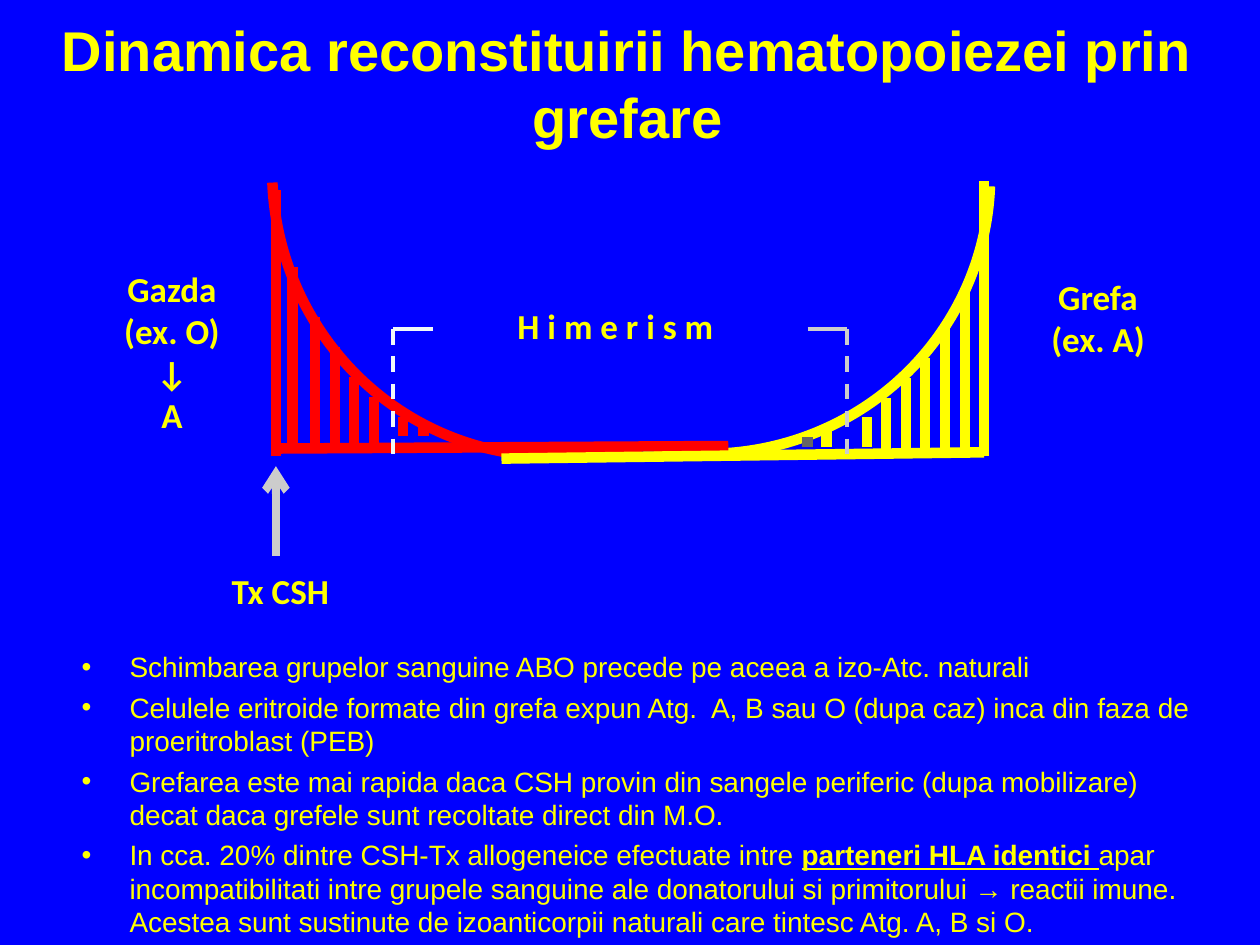
from typing import NamedTuple

from lxml import etree
from pptx import Presentation
from pptx.dml.color import RGBColor
from pptx.enum.dml import MSO_LINE
from pptx.enum.shapes import MSO_CONNECTOR, MSO_SHAPE
from pptx.enum.text import MSO_ANCHOR, MSO_AUTO_SIZE, PP_ALIGN
from pptx.oxml.ns import qn
from pptx.util import Emu, Pt

STRAIGHT = MSO_CONNECTOR.STRAIGHT
ARC = MSO_SHAPE.ARC
DASH = MSO_LINE.DASH
CENTER, LEFT = PP_ALIGN.CENTER, PP_ALIGN.LEFT
MIDDLE, TOP = MSO_ANCHOR.MIDDLE, MSO_ANCHOR.TOP
GROW, FIXED = MSO_AUTO_SIZE.SHAPE_TO_FIT_TEXT, MSO_AUTO_SIZE.NONE

BLUE = RGBColor(0x00, 0x00, 0xFF)
YELLOW = RGBColor(0xFF, 0xFF, 0x00)
RED = RGBColor(0xFF, 0x00, 0x00)
SILVER = RGBColor(0xCC, 0xCC, 0xCC)
WHITE = RGBColor(0xF1, 0xF9, 0xF9)
GREY = RGBColor(0x66, 0x66, 0x66)

PX_EMU = 9144
BULLET_INDENT = 38
THICK = 6
THIN = 2.25


class Stroke(NamedTuple):
    x1: int
    y1: int
    x2: int
    y2: int
    color: RGBColor
    weight: float = THICK
    dashed: bool = False
    arrow: bool = False


class Curve(NamedTuple):
    left: int
    top: int
    rotation: float
    start: float
    color: RGBColor


class Label(NamedTuple):
    left: int
    top: int
    height: int
    lines: list[str]


class Bar(NamedTuple):
    x: int
    top: int
    bottom: int
    color: RGBColor


TITLE = "Dinamica reconstituirii hematopoiezei prin grefare"
TITLE_FONT = {"name": "Arial", "size": Pt(32), "bold": True}
LABEL_FONT = {"name": "Calibri", "size": Pt(20), "bold": True}
BODY_FONT = {"name": "Arial", "size": Pt(16), "bold": False}
STRESS_FONT = BODY_FONT | {"bold": True, "underline": True}

POINTS = [
    [("Schimbarea grupelor sanguine ABO precede pe aceea a izo-Atc. naturali", BODY_FONT)],
    [("Celulele eritroide formate din grefa expun Atg.  A, B sau O (dupa caz) "
      "inca din faza de proeritroblast (PEB)", BODY_FONT)],
    [("Grefarea este mai rapida daca CSH provin din sangele periferic (dupa mobilizare) "
      "decat daca grefele sunt recoltate direct din M.O.", BODY_FONT)],
    [("In cca. 20% dintre CSH-Tx allogeneice efectuate intre ", BODY_FONT),
     ("parteneri HLA identici ", STRESS_FONT),
     ("apar incompatibilitati intre grupele sanguine ale donatorului si primitorului → "
      "reactii imune. Acestea sunt sustinute de izoanticorpii naturali care tintesc "
      "Atg. A, B si O.", BODY_FONT)],
]

AXES = [Stroke(219, 151, 219, 362, RED), Stroke(781, 144, 781, 362, YELLOW)]
CURVES = [
    Curve(337, -89, 102.8, 155.9, YELLOW),
    Curve(216, -91, 180, 156.33, RED),
]
CURVE_WIDTH, CURVE_HEIGHT, CURVE_END = 445, 453, 214.56
BASELINES = [Stroke(217, 356, 578, 354, RED), Stroke(398, 364, 781, 359, YELLOW)]
LABEL_WIDTH = 227
LABELS = [
    Label(375, 237, 44, ["H i m e r i s m"]),
    Label(23, 207, 145, ["Gazda", "(ex. O)", "↓", "A"]),
    Label(758, 214, 77, ["Grefa", "(ex. A)"]),
    Label(109, 447, 44, ["Tx CSH"]),
]
MARKERS = [
    Stroke(219, 441, 219, 370, SILVER, 4.5, arrow=True),
    Stroke(312, 261, 312, 362, WHITE, THIN, dashed=True),
    Stroke(672, 261, 672, 362, SILVER, THIN, dashed=True),
    Stroke(312, 261, 344, 261, WHITE, THIN),
    Stroke(641, 261, 672, 261, SILVER, THIN),
]
BARS = [
    Bar(232, 212, 356, RED), Bar(250, 252, 353, RED), Bar(266, 275, 354, RED),
    Bar(281, 299, 354, RED), Bar(297, 315, 354, RED), Bar(320, 331, 346, RED),
    Bar(336, 338, 346, RED), Bar(641, 347, 355, GREY), Bar(656, 339, 355, YELLOW),
    Bar(688, 331, 355, YELLOW), Bar(703, 316, 362, YELLOW), Bar(719, 300, 362, YELLOW),
    Bar(734, 284, 362, YELLOW), Bar(750, 260, 362, YELLOW), Bar(766, 230, 362, YELLOW),
]


def px(length: int) -> Emu:
    return Emu(length * PX_EMU)


def apply(target, values: dict) -> None:
    for name, value in values.items():
        setattr(target, name, value)


def draw_stroke(page, stroke: Stroke) -> None:
    ends = (px(length) for length in stroke[:4])
    connector = page.shapes.add_connector(STRAIGHT, *ends)
    line = connector.line
    line.color.rgb = stroke.color
    line.width = Pt(stroke.weight)
    if stroke.dashed:
        line.dash_style = DASH
    properties = connector._element.spPr
    if stroke.arrow:
        outline = properties.find(qn("a:ln"))
        etree.SubElement(outline, qn("a:tailEnd"), type="arrow")
    etree.SubElement(properties, qn("a:effectLst"))


def draw_curve(page, curve: Curve) -> None:
    shape = page.shapes.add_shape(
        ARC, px(curve.left), px(curve.top), px(CURVE_WIDTH), px(CURVE_HEIGHT))
    shape.adjustments[0] = curve.start
    shape.adjustments[1] = CURVE_END
    shape.rotation = curve.rotation
    shape.shadow.inherit = False
    shape.fill.background()
    shape.line.color.rgb = curve.color
    shape.line.width = Pt(THICK)


def add_bullet(para) -> None:
    properties = para._p.get_or_add_pPr()
    properties.set("marL", str(px(BULLET_INDENT)))
    properties.set("indent", str(px(-BULLET_INDENT)))
    para.space_before = Pt(3.8)
    etree.SubElement(properties, qn("a:buFont"), typeface="Arial")
    etree.SubElement(properties, qn("a:buChar"), char="•")


def draw_text(page, place: tuple[int, int, int, int], paragraphs: list,
              align=CENTER, anchor=TOP, fit=FIXED, bullets: bool = False) -> None:
    box = page.shapes.add_textbox(*(px(length) for length in place))
    frame = box.text_frame
    apply(frame, {"word_wrap": True, "auto_size": fit, "vertical_anchor": anchor})
    for index, spans in enumerate(paragraphs):
        para = frame.add_paragraph() if index else frame.paragraphs[0]
        para.alignment = align
        if bullets:
            add_bullet(para)
        for text, font in spans:
            span = para.add_run()
            span.text = text
            apply(span.font, font)
            span.font.color.rgb = YELLOW


def main() -> None:
    deck = Presentation()
    apply(deck, {"slide_width": px(1000), "slide_height": px(750)})
    page = deck.slides.add_slide(deck.slide_layouts[6])
    page.background.fill.solid()
    page.background.fill.fore_color.rgb = BLUE

    draw_text(page, (23, 3, 950, 125), [[(TITLE, TITLE_FONT)]], anchor=MIDDLE)
    draw_text(page, (55, 511, 900, 250), POINTS, align=LEFT, bullets=True)
    for axis in AXES:
        draw_stroke(page, axis)
    for curve in CURVES:
        draw_curve(page, curve)
    for baseline in BASELINES:
        draw_stroke(page, baseline)
    for label in LABELS:
        paragraphs = [[(line, LABEL_FONT)] for line in label.lines]
        draw_text(page, (label.left, label.top, LABEL_WIDTH, label.height),
                  paragraphs, fit=GROW)
    for marker in MARKERS:
        draw_stroke(page, marker)
    for bar in BARS:
        draw_stroke(page, Stroke(bar.x, bar.top, bar.x, bar.bottom, bar.color))
    deck.save("out.pptx")


if __name__ == "__main__":
    main()
